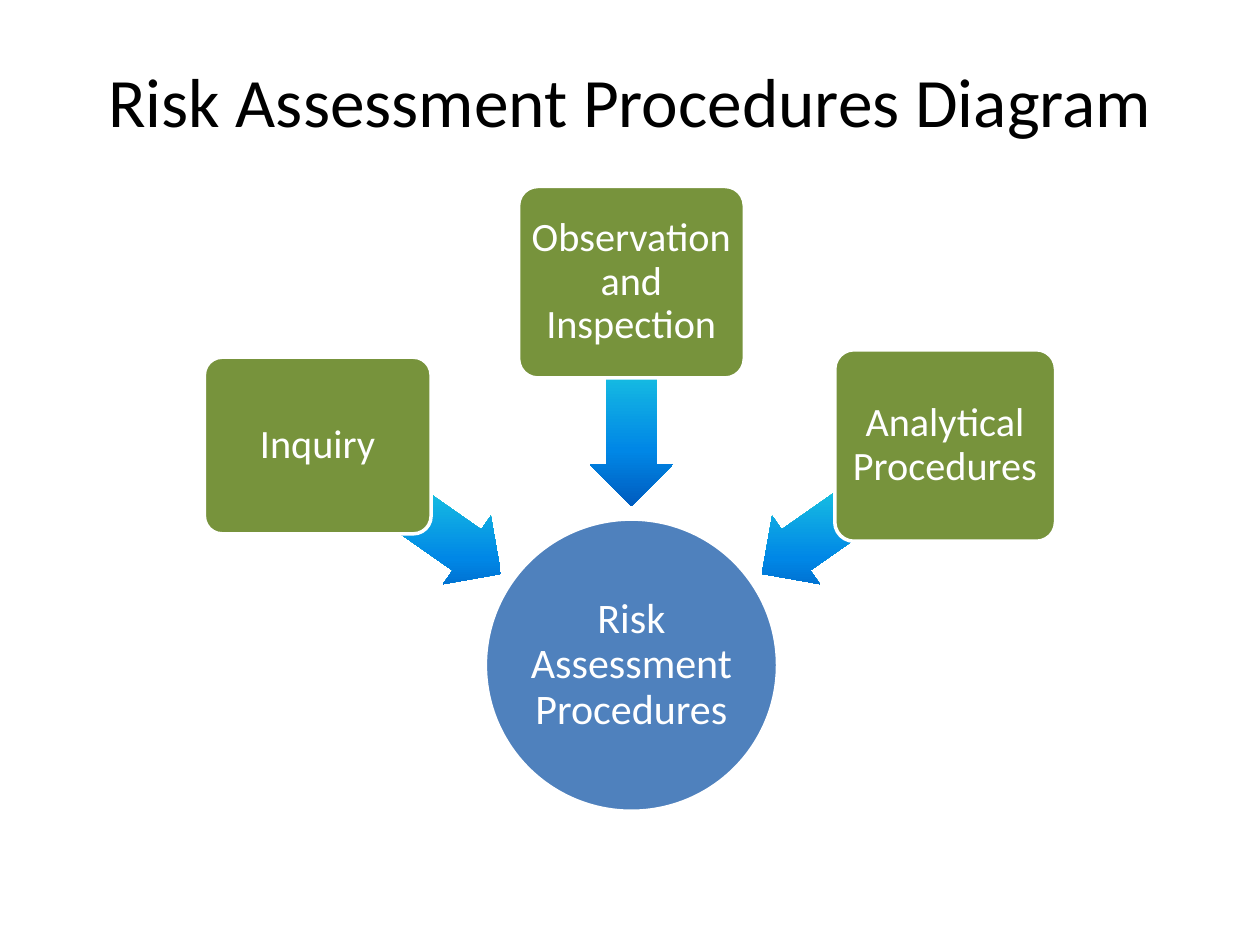
from math import cos, radians, sin

from lxml.etree import SubElement
from pptx import Presentation
from pptx.dml.color import RGBColor as RGB
from pptx.enum.shapes import MSO_SHAPE as Shape
from pptx.enum.text import MSO_ANCHOR as Anchor, PP_ALIGN as Align
from pptx.oxml.ns import qn
from pptx.util import Cm, Pt

TITLE = "Risk Assessment Procedures Diagram"
HUB = "Risk Assessment Procedures"
PROCEDURES = [
    {"text": "Inquiry", "angle": 215, "size": (4.57, 3.56)},
    {"text": "Observation and Inspection", "angle": 270, "size": (4.55, 3.86)},
    {"text": "Analytical Procedures", "angle": 325, "size": (4.45, 3.86)},
]

THEME = {
    "font": "Calibri",
    "title": "000000",
    "label": "FFFFFF",
    "outline": "FFFFFF",
    "hub": "4F81BD",
    "procedure": "77933C",
    "arrow": [(0, "03D4A8"), (25, "21D6E0"), (75, "0087E6"), (100, "005CBF")],
    "title_size": 39.6,
    "hub_size": 24,
    "procedure_size": 23,
    "outline_width": 2,
}

HUB_CENTER = (12.73, 13.41)
HUB_SIZE = (5.89, 5.89)
ARROW_SIZE = (4.52, 1.68)
ARROW_RADIUS = 5.47
PROCEDURE_RADIUS = 7.72


def write(holder, text, *, size, color, inset=0.25, spacing=1.0):
    frame = holder.text_frame
    frame.word_wrap = True
    frame.vertical_anchor = Anchor.MIDDLE
    frame.margin_left = frame.margin_right = Cm(inset)
    frame.margin_top = frame.margin_bottom = Cm(inset)
    line = frame.paragraphs[0]
    line.alignment = Align.CENTER
    line.line_spacing = spacing
    run = line.add_run()
    run.text = text
    run.font.name = THEME["font"]
    run.font.size = Pt(size)
    run.font.color.rgb = RGB.from_string(color)


def place(slide, kind, center, size):
    (x, y), (width, height) = center, size
    part = slide.shapes.add_shape(
        kind, Cm(x - width / 2), Cm(y - height / 2), Cm(width), Cm(height))
    part.shadow.inherit = False
    return part


def paint(part, color):
    part.fill.solid()
    part.fill.fore_color.rgb = RGB.from_string(color)
    part.line.color.rgb = RGB.from_string(THEME["outline"])
    part.line.width = Pt(THEME["outline_width"])


def around_hub(angle, radius):
    x, y = HUB_CENTER
    return x + radius * cos(radians(angle)), y + radius * sin(radians(angle))


def paint_gradient(part, stops):
    part.fill.gradient()
    gradient = part.fill._fill._gradFill
    gradient.set("rotWithShape", "0")
    for child in list(gradient):
        gradient.remove(child)
    stop_list = SubElement(gradient, qn("a:gsLst"))
    for position, color in stops:
        stop = SubElement(stop_list, qn("a:gs"), pos=str(position * 1000))
        SubElement(stop, qn("a:srgbClr"), val=color)
    SubElement(gradient, qn("a:lin"), ang="5400000", scaled="0")


def add_arrow(slide, angle):
    arrow = place(slide, Shape.LEFT_ARROW, around_hub(angle, ARROW_RADIUS), ARROW_SIZE)
    arrow.rotation = angle
    arrow.adjustments[0] = 0.6
    arrow.adjustments[1] = 0.5
    paint_gradient(arrow, THEME["arrow"])
    arrow.line.fill.background()


def add_procedure(slide, text, angle, size):
    center = around_hub(angle, PROCEDURE_RADIUS)
    procedure = place(slide, Shape.ROUNDED_RECTANGLE, center, size)
    procedure.adjustments[0] = 0.1
    paint(procedure, THEME["procedure"])
    write(procedure, text, size=THEME["procedure_size"], color=THEME["label"],
          inset=0.12, spacing=0.9)


def main():
    deck = Presentation()
    deck.slide_width, deck.slide_height = Cm(25.4), Cm(19.05)
    slide = deck.slides.add_slide(deck.slide_layouts[6])

    title = slide.shapes.add_textbox(Cm(1.27), Cm(0.43), Cm(22.86), Cm(3.18))
    write(title, TITLE, size=THEME["title_size"], color=THEME["title"])

    hub = place(slide, Shape.OVAL, HUB_CENTER, HUB_SIZE)
    paint(hub, THEME["hub"])
    write(hub, HUB, size=THEME["hub_size"], color=THEME["label"],
          inset=0.05, spacing=0.9)

    for procedure in PROCEDURES:
        add_arrow(slide, procedure["angle"])
        add_procedure(slide, **procedure)

    deck.save("out.pptx")


if __name__ == "__main__":
    main()
